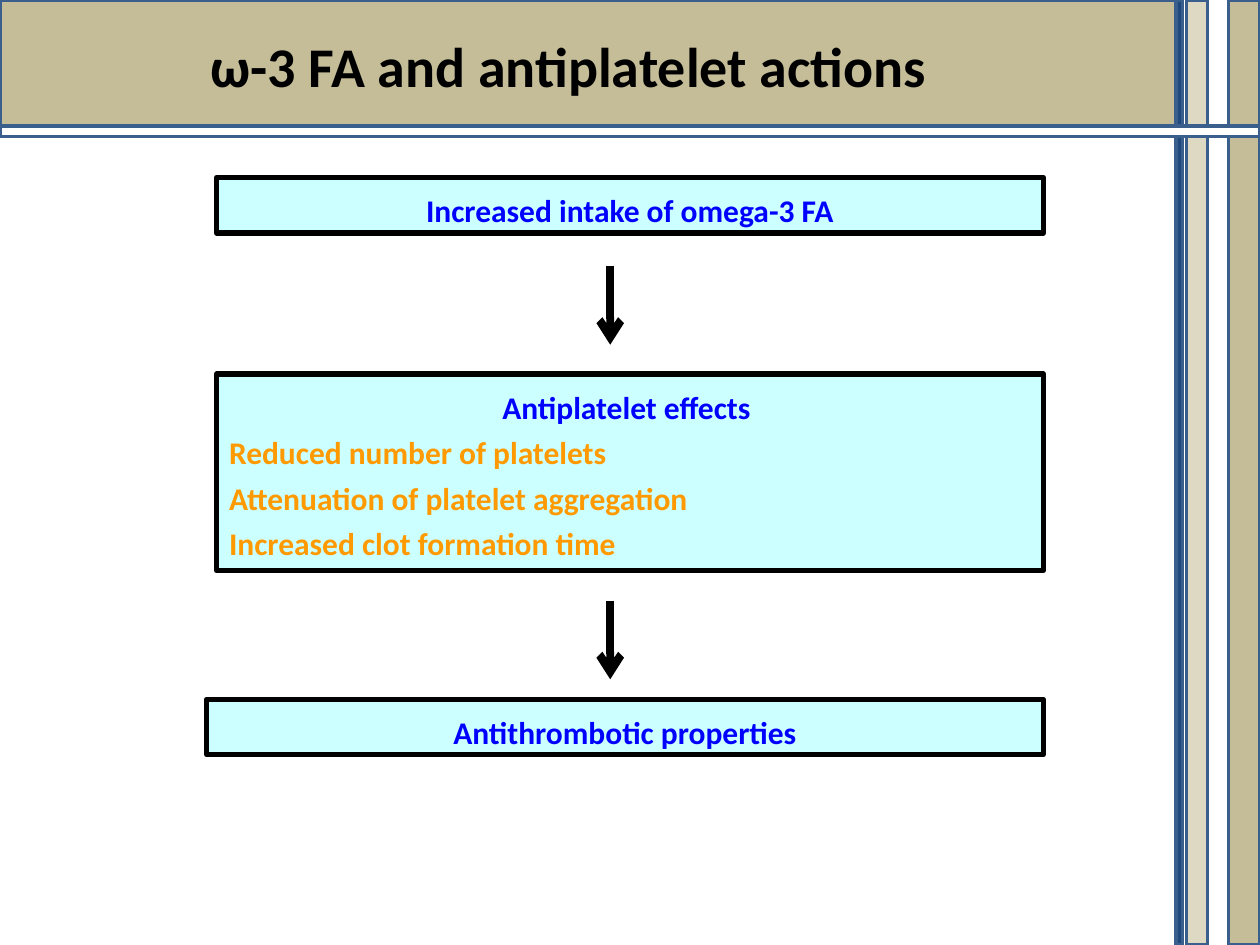
from lxml.etree import SubElement
from pptx import Presentation
from pptx.dml.color import RGBColor
from pptx.enum.shapes import MSO_CONNECTOR, MSO_SHAPE
from pptx.enum.text import MSO_ANCHOR, MSO_AUTO_SIZE, PP_ALIGN
from pptx.oxml.ns import qn
from pptx.util import Pt

W, H = 720, 540
BLACK, BLUE, ORANGE = "000000", "0000FF", "FF9900"
TAN, AQUA, EDGE = "C4BD97", "CCFFFF", "3A5F8C"
BOLD = {"name": "Calibri", "bold": True}
FRAME = {"vertical_anchor": MSO_ANCHOR.TOP, "auto_size": MSO_AUTO_SIZE.NONE}


def color(fmt, value):
    fmt.rgb = RGBColor.from_string(value)


def set_all(obj, values):
    for name, value in values.items():
        setattr(obj, name, value)


def add_rect(s, x, y, w, h, fill, line, weight):
    sp = s.shapes.add_shape(MSO_SHAPE.RECTANGLE, Pt(x), Pt(y), Pt(w), Pt(h))
    sp.shadow.inherit = False
    sp.fill.solid()
    color(sp.fill.fore_color, fill)
    color(sp.line.color, line)
    sp.line.width = Pt(weight)
    return sp


def write(tf, lines, size, spacing, wrap):
    """Fill a text frame with (text, colour, alignment) lines."""
    set_all(tf, FRAME | {"word_wrap": wrap})
    for i, (text, rgb, align) in enumerate(lines):
        p = tf.paragraphs[0] if i == 0 else tf.add_paragraph()
        set_all(p, {"alignment": align, "line_spacing": spacing})
        r = p.add_run()
        r.text = text
        set_all(r.font, BOLD | {"size": Pt(size)})
        color(r.font.color, rgb)


def add_box(s, x, y, w, h, heading, items=()):
    sp = add_rect(s, x, y, w, h, AQUA, BLACK, 3)
    lines = [(heading, BLUE, PP_ALIGN.CENTER)]
    lines += [(item, ORANGE, PP_ALIGN.LEFT) for item in items]
    write(sp.text_frame, lines, 18, 1.2, True)


def add_arrow(s, x, y1, y2):
    cxn = s.shapes.add_connector(MSO_CONNECTOR.STRAIGHT, Pt(x), Pt(y1), Pt(x), Pt(y2))
    color(cxn.line.color, BLACK)
    cxn.line.width = Pt(4.5)
    SubElement(cxn.line._get_or_add_ln(), qn("a:tailEnd"), type="arrow")
    SubElement(cxn._element.spPr, qn("a:effectLst"))


def add_title(s, x, y, w, h, text):
    sp = s.shapes.add_textbox(Pt(x), Pt(y), Pt(w), Pt(h))
    write(sp.text_frame, [(text, BLACK, PP_ALIGN.CENTER)], 32, 1.0, False)


def main():
    prs = Presentation()
    set_all(prs, {"slide_width": Pt(W), "slide_height": Pt(H)})
    s = prs.slides.add_slide(prs.slide_layouts[6])

    # Header band, side stripes and the rule across them
    for x, y, w, h, fill in [
        (0, 0, 672, 72, TAN),
        (702, 0, 18, H, TAN),
        (678, 0, 12, H, "DDD9C3"),
        (672, 0, 3.6, H, "1F497D"),
        (0, 72, W, 6, "FFFFFF"),
    ]:
        add_rect(s, x, y, w, h, fill, EDGE, 2)

    add_title(s, 103.5, 14.4, 443, 46, "ω-3 FA and antiplatelet actions")

    # Flow from intake to outcome
    add_box(s, 123.8, 101.5, 472.4, 31.7, "Increased intake of omega-3 FA")
    add_box(s, 123.8, 213.8, 472.4, 112.3, "Antiplatelet effects ", [
        "Reduced number of platelets",
        "Attenuation of platelet aggregation",
        "Increased clot formation time",
    ])
    add_box(s, 118.1, 399.6, 478.1, 31.7, "Antithrombotic properties")
    for top in (152, 343.2):
        add_arrow(s, 348.7, top, top + 45)

    prs.save("out.pptx")


if __name__ == "__main__":
    main()
